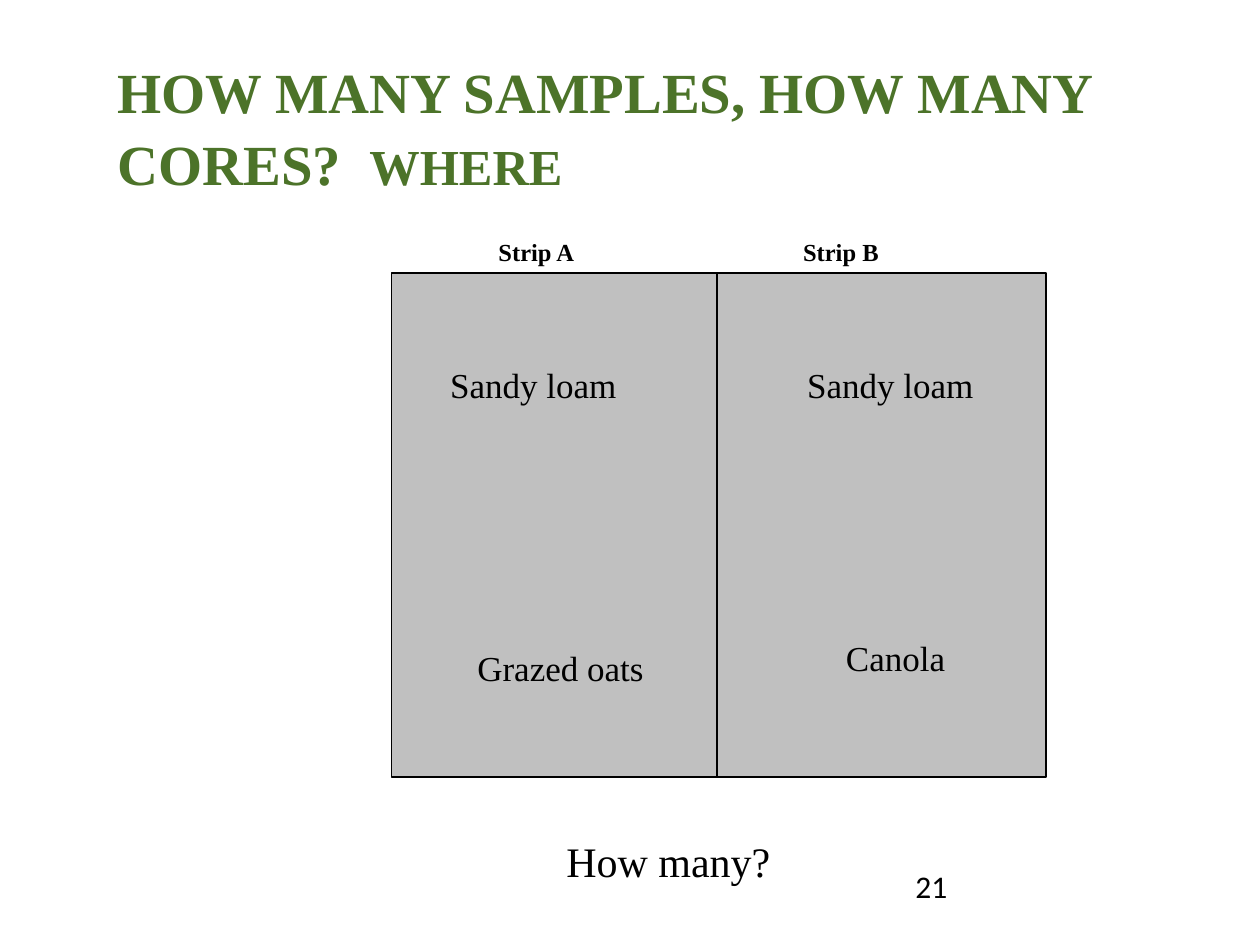
import dataclasses

import pptx
import pptx.dml.color
import pptx.enum.shapes
import pptx.enum.text
import pptx.util

COLORS = {"ink": "000000", "heading": "4C7329", "soil": "C0C0C0", "paper": "FFFFFF"}
SERIF = "Times New Roman"
LEFT = pptx.enum.text.PP_ALIGN.LEFT
CENTER = pptx.enum.text.PP_ALIGN.CENTER

# Slide grid: 120 columns by 90 rows
COLUMNS, ROWS = 120, 90
CELL = pptx.util.Inches(10) // COLUMNS
STRIP_TOP, STRIP_ROWS = 26, 48


@dataclasses.dataclass(frozen=True)
class Area:
    column: float
    row: float
    columns: float
    rows: float

    def emu(self) -> tuple[int, ...]:
        return tuple(round(value * CELL) for value in dataclasses.astuple(self))


@dataclasses.dataclass(frozen=True)
class Run:
    text: str
    size: float
    bold: bool = False
    color: str = "ink"
    font: str = SERIF


@dataclasses.dataclass(frozen=True)
class Label:
    area: Area
    runs: tuple[Run, ...]
    align: pptx.enum.text.PP_ALIGN = CENTER


def rgb(name: str) -> pptx.dml.color.RGBColor:
    return pptx.dml.color.RGBColor.from_string(COLORS[name])


def draw_strip(slide, area: Area) -> None:
    shape = slide.shapes.add_shape(pptx.enum.shapes.MSO_SHAPE.RECTANGLE, *area.emu())
    shape.shadow.inherit = False
    shape.fill.solid()
    shape.fill.fore_color.rgb = rgb("soil")
    shape.line.color.rgb = rgb("ink")
    shape.line.width = pptx.util.Pt(1)


def draw_label(slide, label: Label):
    frame = slide.shapes.add_textbox(*label.area.emu()).text_frame
    frame.word_wrap = True
    paragraph = frame.paragraphs[0]
    paragraph.alignment = label.align
    for part in label.runs:
        run = paragraph.add_run()
        run.text = part.text
        run.font.size = pptx.util.Pt(part.size)
        run.font.bold = part.bold
        run.font.name = part.font
        run.font.color.rgb = rgb(part.color)
    return frame


def strip_name(column: float, columns: float, text: str) -> Label:
    return Label(Area(column, 22, columns, 4), (Run(text, 14, bold=True),), LEFT)


def field_note(column: float, row: float, columns: float, text: str) -> Label:
    return Label(Area(column, row, columns, 5.2), (Run(text, 20),))


TITLE = Label(
    Area(10, 4, 102, 15),
    (
        Run("HOW MANY SAMPLES, HOW MANY CORES?  ", 32.4, True, "heading"),
        Run("WHERE", 28.8, True, "heading"),
    ),
    LEFT,
)
STRIPS = (
    Area(37.3, STRIP_TOP, 31.4, STRIP_ROWS),
    Area(68.3, STRIP_TOP, 31.3, STRIP_ROWS),
)
LABELS = (
    strip_name(46.3, 12, "Strip A"),
    strip_name(75.3, 15, "Strip B"),
    field_note(41.3, 34, 19, "Sandy loam"),
    field_note(73.3, 34, 23, "Sandy loam"),
    field_note(43.3, 61, 21, "Grazed oats "),
    field_note(76.3, 60, 18, "Canola"),
    Label(Area(17, 79, 93.3, 6), (Run("How many?", 24),)),
    Label(Area(86, 82, 28, 6.2), (Run("21", 18, font="Calibri"),), LEFT),
)


def main() -> None:
    presentation = pptx.Presentation()
    presentation.slide_width = COLUMNS * CELL
    presentation.slide_height = ROWS * CELL
    slide = presentation.slides.add_slide(presentation.slide_layouts[6])
    slide.background.fill.solid()
    slide.background.fill.fore_color.rgb = rgb("paper")

    # Title
    title = draw_label(slide, TITLE)
    title.vertical_anchor = pptx.enum.text.MSO_ANCHOR.MIDDLE
    title.margin_top = pptx.util.Inches(0.12)
    title.paragraphs[0].line_spacing = 1.05

    # Field strips and their labels
    for strip in STRIPS:
        draw_strip(slide, strip)
    for label in LABELS:
        draw_label(slide, label)

    presentation.save("out.pptx")


if __name__ == "__main__":
    main()
